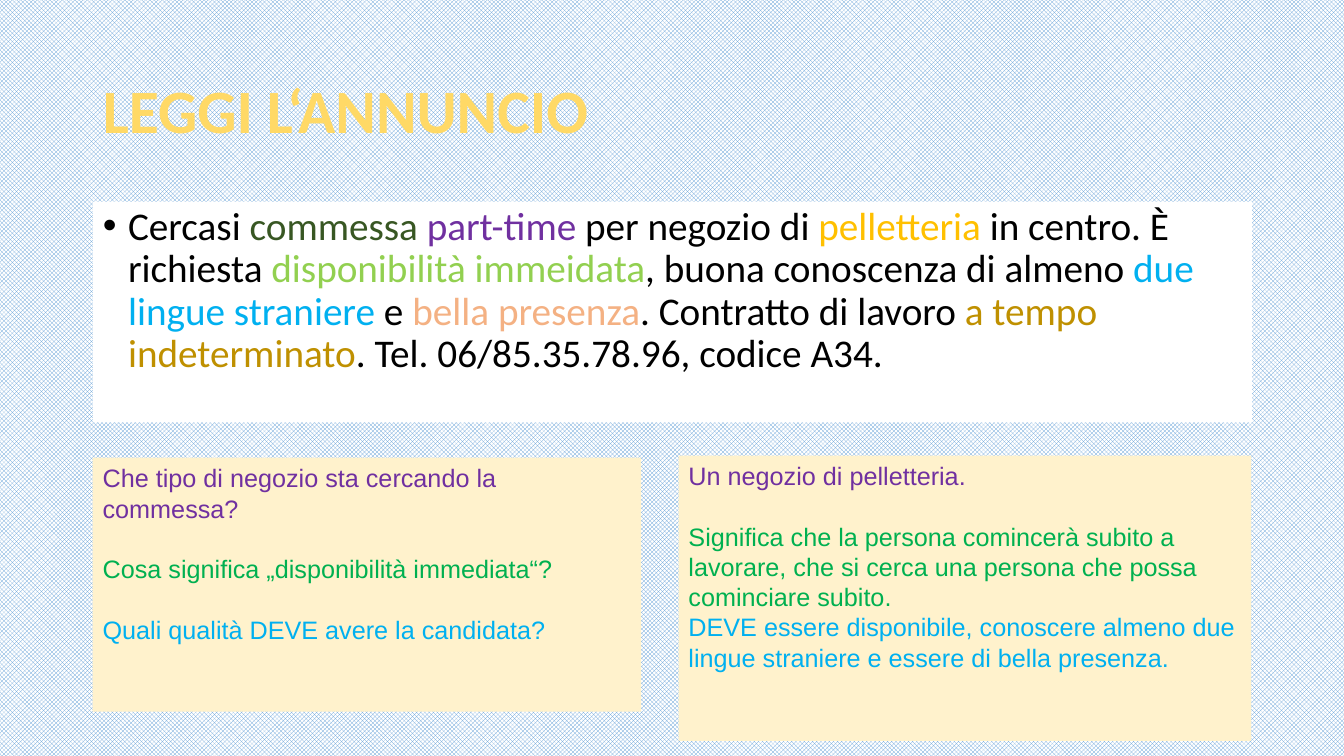
from lxml.etree import SubElement as Sub
from pptx import Presentation
from pptx.dml.color import RGBColor as RGB
from pptx.enum.dml import MSO_PATTERN as Pattern
from pptx.enum.shapes import MSO_SHAPE as Shape
from pptx.enum.text import MSO_ANCHOR as Anchor, MSO_AUTO_SIZE as Auto, PP_ALIGN as Align
from pptx.oxml import parse_xml
from pptx.oxml.ns import nsdecls, qn
from pptx.util import Pt

PX = 9144  # 100 px to the inch
COLORS = {
    "white": "FFFFFF", "black": "000000", "blue": "5B9BD5", "cream": "FFF2CC",
    "gold": "FFC000", "sand": "FFD966", "pine": "385723", "violet": "7030A0",
    "lime": "92D050", "sky": "00B0F0", "peach": "F4B183", "ochre": "BF9000",
    "green": "00B050",
}
AD = [
    ("Cercasi ", "black"), ("commessa ", "pine"), ("part-time", "violet"),
    (" per negozio di ", "black"), ("pelletteria", "gold"),
    (" in centro. È richiesta ", "black"), ("disponibilità immeidata", "lime"),
    (", buona conoscenza di almeno ", "black"), ("due lingue straniere", "sky"),
    (" e ", "black"), ("bella presenza", "peach"),
    (". Contratto di lavoro ", "black"), ("a tempo indeterminato", "ochre"),
    (". Tel. 06/85.35.78.96, codice A34.", "black"),
]
# Each line: text, colour, space before in points
ASKS = [
    ("Che tipo di negozio sta cercando la commessa?", "violet", 0),
    ("Cosa significa „disponibilità immediata“?", "green", 21.6),
    ("Quali qualità DEVE avere la candidata?", "sky", 21.6),
]
REPLIES = [
    ("Un negozio di pelletteria.", "violet", 0),
    ("Significa che la persona comincerà subito a lavorare, che si cerca "
     "una persona che possa cominciare subito.", "green", 21.6),
    ("DEVE essere disponibile, conoscere almeno due lingue straniere "
     "e essere di bella presenza.", "sky", 0),
]


def color(name):
    return RGB.from_string(COLORS[name])


def write(para, text, size=18, font="Arial", tint="black", bold=False):
    run = para.add_run()
    run.text = text
    run.font.size, run.font.name, run.font.bold = Pt(size), font, bold
    run.font.color.rgb = color(tint)
    return run


def place(shape, left, top, width, height):
    shape.left, shape.top = left * PX, top * PX
    shape.width, shape.height = width * PX, height * PX


def paint(shape, name):
    shape.fill.solid()
    shape.fill.fore_color.rgb = color(name)


def setup(para, before=0, lines=None):
    para.alignment = Align.LEFT
    para.space_before, para.space_after = Pt(before), Pt(0)
    para.line_spacing = lines


def add_bullet(para):
    props = para._p.get_or_add_pPr()
    props.set("marL", str(25 * PX))
    props.set("indent", str(-25 * PX))
    Sub(props, qn("a:buFont")).set("typeface", "Arial")
    Sub(props, qn("a:buChar")).set("char", "•")


def gild(run):
    """Give the run a gold outline and a gradient fill."""
    run.font.fill.gradient()
    fill = run.font._element.find(qn("a:gradFill"))
    stops = "".join(
        f'<a:gs pos="{pos}000"><a:srgbClr val="{COLORS[name]}"/></a:gs>'
        for pos, name in ((0, "gold"), (4, "sand"), (87, "cream")))
    new = parse_xml(f'<a:gradFill {nsdecls("a")}><a:gsLst>{stops}</a:gsLst>'
                    '<a:lin ang="5400000"/></a:gradFill>')
    edge = parse_xml(f'<a:ln {nsdecls("a")} w="12700"><a:solidFill>'
                     f'<a:srgbClr val="{COLORS["gold"]}"/></a:solidFill></a:ln>')
    fill.addprevious(edge)
    fill.getparent().replace(fill, new)


def add_title(shape, text):
    place(shape, 92, 40, 1150, 145)
    frame = shape.text_frame
    frame.vertical_anchor, frame.auto_size = Anchor.MIDDLE, Auto.NONE
    para = frame.paragraphs[0]
    setup(para, lines=0.9)
    gild(write(para, text, size=44, font="Calibri", bold=True))


def add_ad(shape, parts):
    place(shape, 92, 200, 1150, 219)
    paint(shape, "white")
    frame = shape.text_frame
    frame.vertical_anchor, frame.auto_size = Anchor.TOP, Auto.NONE
    para = frame.paragraphs[0]
    setup(para, lines=0.9)
    add_bullet(para)
    for text, tint in parts:
        write(para, text, size=28, font="Calibri", tint=tint)


def add_card(slide, box, lines):
    shape = slide.shapes.add_shape(Shape.RECTANGLE, 0, 0, PX, PX)
    place(shape, *box)
    paint(shape, "cream")
    shape.line.fill.background()
    shape.shadow.inherit = False
    frame = shape.text_frame
    frame.word_wrap, frame.vertical_anchor = True, Anchor.TOP
    for i, (text, tint, before) in enumerate(lines):
        para = frame.add_paragraph() if i else frame.paragraphs[0]
        setup(para, before)
        write(para, text, tint=tint)


def main():
    deck = Presentation()
    deck.slide_width, deck.slide_height = 1333 * PX, 750 * PX
    slide = deck.slides.add_slide(deck.slide_layouts[1])

    # Trellis background
    back = slide.background.fill
    back.patterned()
    back.pattern = Pattern.TRELLIS
    back.fore_color.rgb, back.back_color.rgb = color("blue"), color("white")

    # Title and job advert
    add_title(slide.shapes.title, "LEGGI L‘ANNUNCIO")
    add_ad(slide.placeholders[1], AD)

    # Questions and answers
    add_card(slide, (92, 454, 544, 252), ASKS)
    add_card(slide, (673, 452, 568, 283), REPLIES)
    deck.save("out.pptx")


if __name__ == "__main__":
    main()
